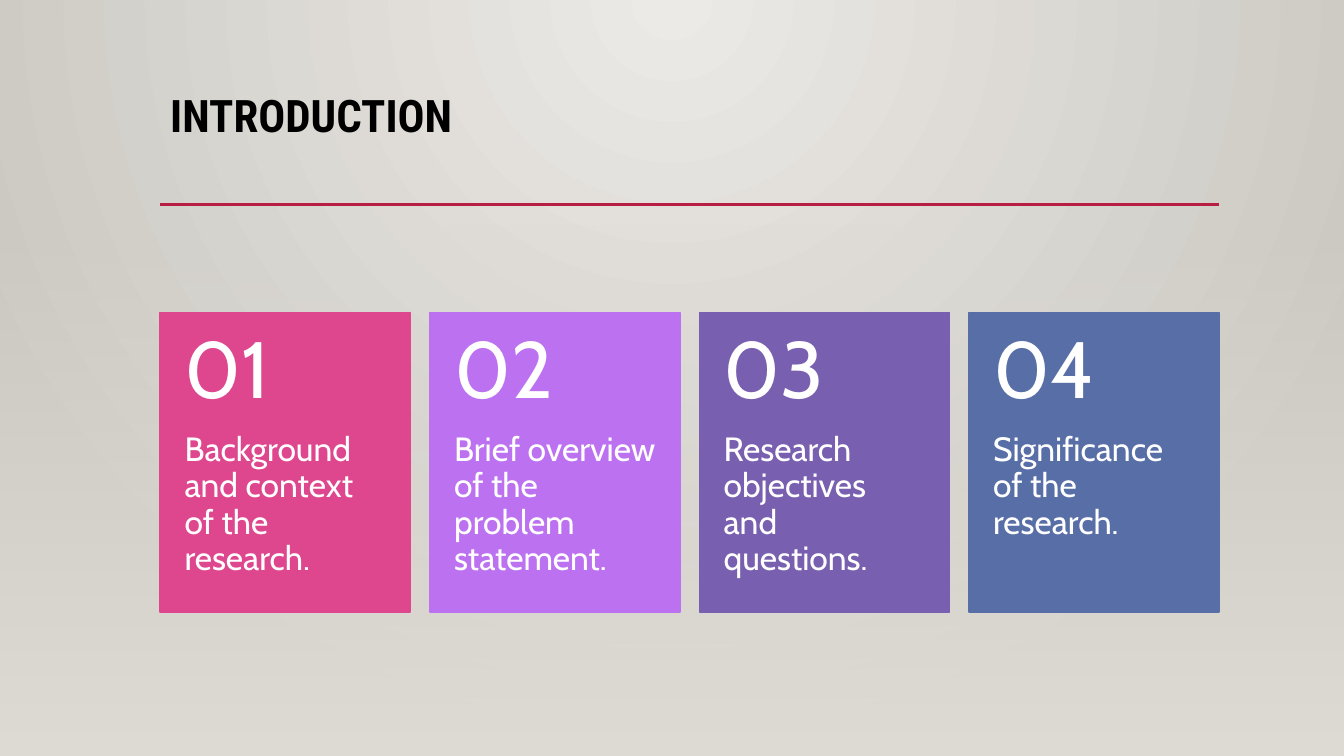
import pptx
import pptx.util
import pptx.oxml
import pptx.oxml.ns
import pptx.dml.color
import pptx.enum.shapes
import pptx.enum.text
from pptx.util import Inches

# Content
TITLE = "INTRODUCTION"
CARDS = [
    ("Background and context of the research.", "DE478E"),
    ("Brief overview of the problem statement.", "BC72F0"),
    ("Research objectives and questions.", "795FAF"),
    ("Significance of the research.", "586EA6"),
]

THEME = {
    "backdrop": ("ECEAE7", "CAC7C1"), "veil": "DFDBD5", "rule": "B71E42",
    "title": "000000", "card_text": "FFFFFF",
    "title_font": "Roboto Condensed", "card_font": "Cabin",
    "title_size": 32, "number_size": 57, "body_size": 24,
    "rule_width": 2.5, "border_width": 1.25,
}

# Layout, in inches
SLIDE_WIDTH, SLIDE_HEIGHT = 13.33, 7.5
LEFT, CONTENT_WIDTH = 1.59, 10.5
TITLE_TOP, TITLE_HEIGHT = 0.88, 1.15
RULE_TOP, VEIL_TOP = 2.03, 2.21
CARD_TOP, CARD_WIDTH, CARD_HEIGHT = 3.1, 2.48, 2.97
NUMBER_HEIGHT = 1.19
CARD_STEP = (CONTENT_WIDTH - CARD_WIDTH) / (len(CARDS) - 1)

NAMESPACE = pptx.oxml.ns.nsdecls("a")
qn = pptx.oxml.ns.qn


def color(name):
    return pptx.dml.color.RGBColor.from_string(name)


def set_gradient(fill, colors):
    fill.gradient()
    for stop, name in zip(fill.gradient_stops, colors):
        stop.color.rgb = color(name)


def add_rectangle(page, left, top, width, height):
    shape = page.shapes.add_shape(
        pptx.enum.shapes.MSO_SHAPE.RECTANGLE,
        Inches(left), Inches(top), Inches(width), Inches(height))
    shape.shadow.inherit = False
    return shape


def add_text(page, text, frame, font, size, ink, insets=(0.1, 0.05, 0.1, 0.05),
             anchor=pptx.enum.text.MSO_ANCHOR.TOP, bold=False):
    box = page.shapes.add_textbox(*map(Inches, frame)).text_frame
    box.word_wrap = True
    box.vertical_anchor = anchor
    (box.margin_left, box.margin_top,
     box.margin_right, box.margin_bottom) = map(Inches, insets)
    box.text = text
    para = box.paragraphs[0]
    para.line_spacing = 0.9
    span = para.runs[0].font
    span.name, span.size, span.bold = font, pptx.util.Pt(size), bold
    span.color.rgb = color(ink)


def add_background(page):
    # Radial light from the top centre
    set_gradient(page.background.fill, THEME["backdrop"])
    gradient = page.element.find(".//" + qn("a:gradFill"))
    gradient.replace(gradient.find(qn("a:lin")), pptx.oxml.parse_xml(
        f'<a:path {NAMESPACE} path="circle">'
        '<a:fillToRect l="43000" t="0" r="43000" b="100000"/></a:path>'))

    # Veil fading in towards the bottom
    veil = add_rectangle(page, 0, VEIL_TOP, SLIDE_WIDTH, SLIDE_HEIGHT - VEIL_TOP)
    set_gradient(veil.fill, [THEME["veil"]] * 2)
    veil.fill.gradient_angle = 270
    veil.line.fill.background()
    veil.element.find(".//" + qn("a:srgbClr")).append(
        pptx.oxml.parse_xml(f'<a:alpha {NAMESPACE} val="0"/>'))


def add_heading(page):
    add_text(page, TITLE, (LEFT, TITLE_TOP, CONTENT_WIDTH, TITLE_HEIGHT),
             THEME["title_font"], THEME["title_size"], THEME["title"], bold=True)
    rule = page.shapes.add_connector(
        pptx.enum.shapes.MSO_CONNECTOR.STRAIGHT, Inches(LEFT), Inches(RULE_TOP),
        Inches(LEFT + CONTENT_WIDTH), Inches(RULE_TOP))
    rule.line.color.rgb = color(THEME["rule"])
    rule.line.width = pptx.util.Pt(THEME["rule_width"])
    rule.element.spPr.append(pptx.oxml.parse_xml(f"<a:effectLst {NAMESPACE}/>"))


def add_card(page, index, text, tint):
    left = LEFT + index * CARD_STEP
    card = add_rectangle(page, left, CARD_TOP, CARD_WIDTH, CARD_HEIGHT)
    card.fill.solid()
    card.fill.fore_color.rgb = color(tint)
    card.line.color.rgb = color(tint)
    card.line.width = pptx.util.Pt(THEME["border_width"])

    add_text(page, text,
             (left, CARD_TOP + NUMBER_HEIGHT, CARD_WIDTH, CARD_HEIGHT - NUMBER_HEIGHT),
             THEME["card_font"], THEME["body_size"], THEME["card_text"],
             insets=(0.24, 0, 0.24, 0.36))
    add_text(page, f"{index + 1:02}", (left, CARD_TOP, CARD_WIDTH, NUMBER_HEIGHT),
             THEME["card_font"], THEME["number_size"], THEME["card_text"],
             insets=(0.24, 0.18, 0.24, 0.18),
             anchor=pptx.enum.text.MSO_ANCHOR.MIDDLE)


def main():
    deck = pptx.Presentation()
    deck.slide_width, deck.slide_height = Inches(SLIDE_WIDTH), Inches(SLIDE_HEIGHT)
    page = deck.slides.add_slide(deck.slide_layouts[6])
    add_background(page)
    add_heading(page)
    for index, (text, tint) in enumerate(CARDS):
        add_card(page, index, text, tint)
    deck.save("out.pptx")


if __name__ == "__main__":
    main()
